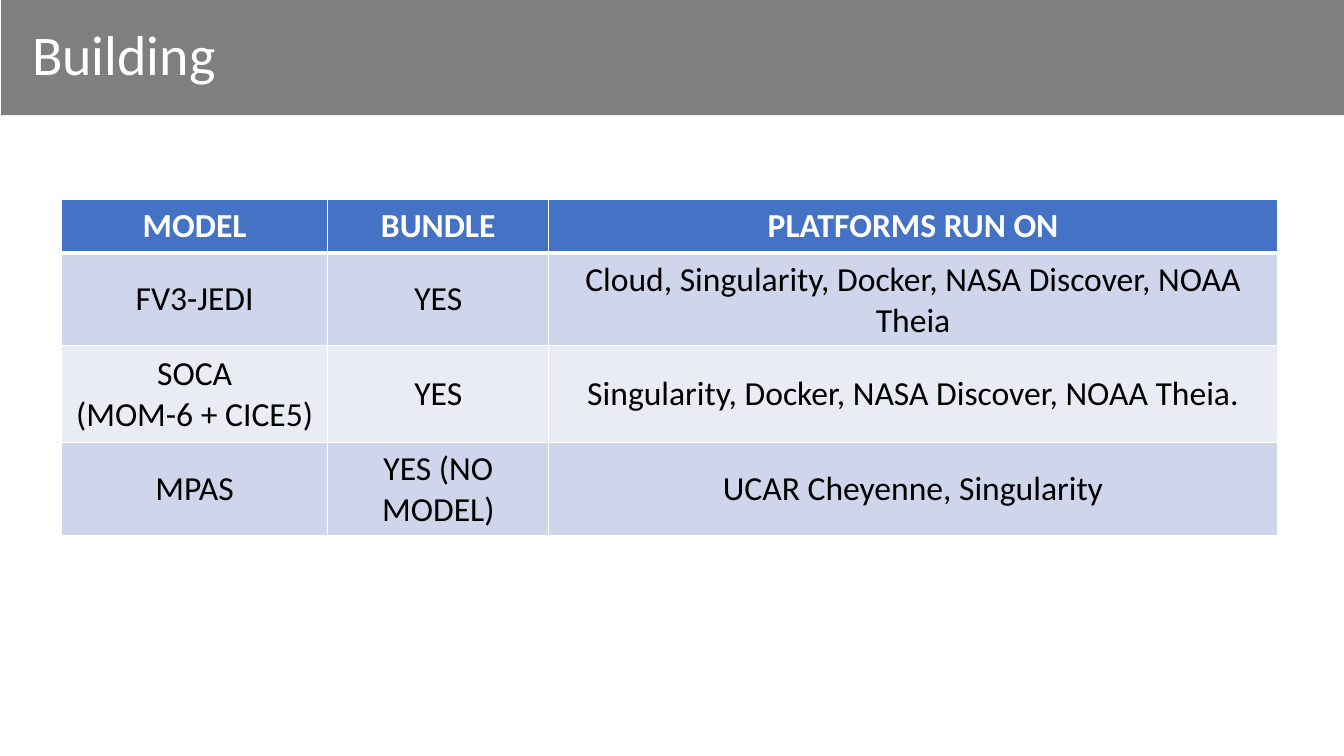
from lxml.etree import SubElement
from pptx import Presentation
from pptx.dml.color import RGBColor
from pptx.enum.shapes import MSO_SHAPE
from pptx.enum.text import MSO_ANCHOR, PP_ALIGN
from pptx.oxml.ns import qn
from pptx.util import Cm, Pt

BLACK = RGBColor(0x00, 0x00, 0x00)
WHITE = RGBColor(0xFF, 0xFF, 0xFF)
HEADER_BLUE = RGBColor(0x44, 0x72, 0xC4)
BAND_DARK = RGBColor(0xCF, 0xD5, 0xEA)
BAND_LIGHT = RGBColor(0xE9, 0xEB, 0xF5)

FONT = "Calibri"
SLIDE_WIDTH, SLIDE_HEIGHT = Cm(33.87), Cm(19.05)
COLUMN_WIDTHS = [Cm(6.71), Cm(5.57), Cm(18.36)]
ROW_HEIGHTS = [Cm(1.35), Cm(2.33), Cm(2.44), Cm(2.33)]
ROWS = [
    ("MODEL", "BUNDLE", "PLATFORMS RUN ON"),
    ("FV3-JEDI", "YES", "Cloud, Singularity, Docker, NASA Discover, NOAA Theia"),
    ("SOCA\n(MOM-6 + CICE5)", "YES", "Singularity, Docker, NASA Discover, NOAA Theia."),
    ("MPAS", "YES (NO MODEL)", "UCAR Cheyenne, Singularity"),
]


def write_text(frame, text, size, color, bold=False, align=PP_ALIGN.LEFT, line_spacing=1.0):
    """Fill a text frame, one paragraph for each line of text."""
    frame.word_wrap = True
    frame.text = text
    for paragraph in frame.paragraphs:
        paragraph.alignment = align
        paragraph.line_spacing = line_spacing
        font = paragraph.font
        font.name, font.size, font.bold = FONT, Pt(size), bold
        font.color.rgb = color


def add_title_bar(slide, left, top, width, height, title):
    bar = slide.shapes.add_shape(MSO_SHAPE.RECTANGLE, left, top, width, height)
    bar.shadow.inherit = False
    bar.line.fill.background()
    bar.fill.solid()
    bar.fill.fore_color.rgb = BLACK
    color = bar.fill._xPr.find(".//" + qn("a:srgbClr"))
    SubElement(color, qn("a:alpha"), val="50000")

    box = slide.shapes.add_textbox(left + Cm(0.53), top + Cm(0.3), Cm(27.08), Cm(2.31))
    box.text_frame.vertical_anchor = MSO_ANCHOR.MIDDLE
    write_text(box.text_frame, title, 40, WHITE, line_spacing=0.9)


def add_borders(cell, widths):
    """Draw white borders; widths maps a side (L, R, T, B) to points."""
    properties = cell._tc.get_or_add_tcPr()
    for side, width in widths.items():
        line = SubElement(properties, qn(f"a:ln{side}"), w=str(Pt(width)))
        fill = SubElement(line, qn("a:solidFill"))
        SubElement(fill, qn("a:srgbClr"), val=str(WHITE))


def add_platform_table(slide, left, top):
    frame = slide.shapes.add_table(len(ROWS), len(COLUMN_WIDTHS), left, top,
                                   sum(COLUMN_WIDTHS), sum(ROW_HEIGHTS))
    table = frame.table
    for column, width in zip(table.columns, COLUMN_WIDTHS):
        column.width = width
    for row_index, texts in enumerate(ROWS):
        table.rows[row_index].height = ROW_HEIGHTS[row_index]
        is_header = row_index == 0
        band = BAND_DARK if row_index % 2 else BAND_LIGHT
        for column_index, text in enumerate(texts):
            cell = table.cell(row_index, column_index)
            add_borders(cell, {"L": 1, "R": 1, "T": 3 if row_index == 1 else 1,
                               "B": 3 if is_header else 1})
            cell.fill.solid()
            cell.fill.fore_color.rgb = HEADER_BLUE if is_header else band
            cell.vertical_anchor = MSO_ANCHOR.MIDDLE
            cell.margin_left = cell.margin_right = Cm(0.3)
            cell.margin_top = cell.margin_bottom = Cm(0.15)
            write_text(cell.text_frame, text, 24, WHITE if is_header else BLACK,
                       bold=is_header, align=PP_ALIGN.CENTER)


def main():
    presentation = Presentation()
    presentation.slide_width, presentation.slide_height = SLIDE_WIDTH, SLIDE_HEIGHT
    slide = presentation.slides.add_slide(presentation.slide_layouts[6])
    add_title_bar(slide, Cm(0.03), Cm(0), SLIDE_WIDTH - Cm(0.03), Cm(2.9), "Building")
    add_platform_table(slide, Cm(1.55), Cm(5.03))
    presentation.save("out.pptx")


if __name__ == "__main__":
    main()
